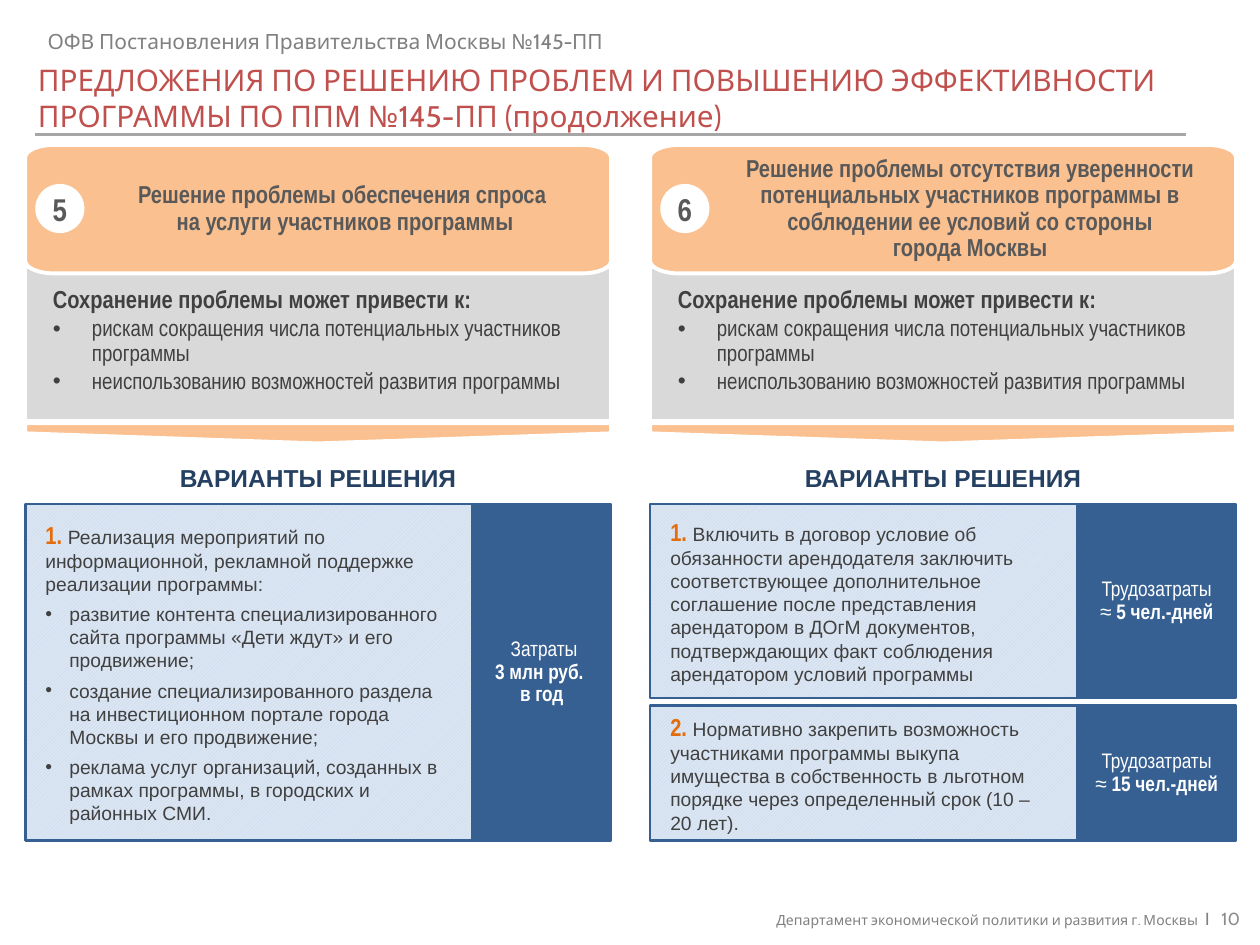
import math
from lxml import etree
from pptx import Presentation
from pptx import util as u
from pptx.dml import color
from pptx.enum import dml, shapes, text
from pptx.oxml import ns

In = u.Inches
MID, TOP = text.MSO_ANCHOR.MIDDLE, text.MSO_ANCHOR.TOP
LEFT, CENTER, RIGHT = text.PP_ALIGN.LEFT, text.PP_ALIGN.CENTER, text.PP_ALIGN.RIGHT
KIND = shapes.MSO_SHAPE
NARROW = "Arial Narrow"
INSET = (0.1, 0.05, 0.1, 0.05)


def rgb(code):
    return color.RGBColor.from_string(code)


def style(obj, vals):
    for key, val in vals.items():
        setattr(obj, key, val)


def font(size, name, code, bold=False):
    return dict(size=u.Pt(size), name=name, bold=bold), code


def add_run(para, words, look):
    for i, part in enumerate(words.split("\n")):
        if i:
            para.add_line_break()
        if part:
            run = para.add_run()
            run.text = part
            style(run.font, look[0])
            run.font.color.rgb = rgb(look[1])


def indent(para, left, hang, mark=None):
    props = para._p.get_or_add_pPr()
    props.set("marL", str(In(left)))
    props.set("indent", str(In(-hang)))
    if mark:
        font_el = etree.SubElement(props, ns.qn("a:buFont"))
        font_el.set("typeface", "Arial")
        etree.SubElement(props, ns.qn("a:buChar")).set("char", mark)


def write(shape, paras, inset=INSET, anchor=MID, align=LEFT, space=1, after=0):
    frame = shape.text_frame
    sides = ("margin_left", "margin_top", "margin_right", "margin_bottom")
    style(frame, dict(zip(sides, map(In, inset))))
    style(frame, dict(word_wrap=True, vertical_anchor=anchor,
                      auto_size=text.MSO_AUTO_SIZE.NONE))
    for i, (runs, dent) in enumerate(paras):
        para = frame.add_paragraph() if i else frame.paragraphs[0]
        style(para, dict(alignment=align, line_spacing=space, space_after=u.Pt(after)))
        if dent:
            indent(para, *dent)
        for words, look in runs:
            add_run(para, words, look)


def paint(shape, fill, line=None, width=2.25):
    shape.shadow.inherit = False
    if isinstance(fill, tuple):
        shape.fill.patterned()
        shape.fill.pattern = dml.MSO_PATTERN.LIGHT_UPWARD_DIAGONAL
        shape.fill.fore_color.rgb, shape.fill.back_color.rgb = map(rgb, fill)
    else:
        shape.fill.solid()
        shape.fill.fore_color.rgb = rgb(fill)
    if line:
        shape.line.color.rgb = rgb(line)
        shape.line.width = u.Pt(width)
    else:
        shape.line.fill.background()
    return shape


def block(slide, kind, box, *look):
    return paint(slide.shapes.add_shape(kind, *map(In, box)), *look)


def label(slide, box, paras, **opts):
    write(slide.shapes.add_textbox(*map(In, box)), paras, **opts)


def banner(slide, box, num, lines):
    x, y, w, h = box
    rx, ry, steps = 0.23, 0.1, 8
    mids = [(x + w - rx, y + ry), (x + w - rx, y + h - ry),
            (x + rx, y + h - ry), (x + rx, y + ry)]
    dots = []
    for i, (cx, cy) in enumerate(mids):
        for k in range(steps + 1):
            ang = math.pi / 2 * (i - 1 + k / steps)
            dots.append((In(cx + rx * math.cos(ang)), In(cy + ry * math.sin(ang))))
    pen = slide.shapes.build_freeform(*dots[0])
    pen.add_line_segments(dots[1:], close=True)
    look = font(14, NARROW, "595959", True)
    write(paint(pen.convert_to_shape(), "FAC090", "FFFFFF"),
          [([(line, look)], None) for line in lines],
          inset=(0.51, 0.03, 0.08, 0.03), align=CENTER, space=0.9)
    dot = block(slide, KIND.OVAL, (x + 0.08, y + 0.31, 0.39, 0.39), "FFFFFF")
    write(dot, [([(num, font(18, NARROW, "595959", True))], None)],
          inset=(0, 0, 0, 0), align=CENTER)


def risks(slide, box):
    head, item = font(14, NARROW, "404040", True), font(13, NARROW, "404040")
    dent = (0.41, 0.31, "•")
    write(block(slide, KIND.RECTANGLE, box, "D9D9D9", "FFFFFF"), [
        ([("Сохранение проблемы может привести к:", head)], (0.31, 0.21)),
        ([("рискам сокращения числа потенциальных участников программы", item)], dent),
        ([("неиспользованию возможностей развития программы", item)], dent),
    ], inset=(0.12, 0.16, 0.12, 0.08), anchor=TOP, space=0.9, after=2)


def arrow(slide, box):
    x, y, w, h = box
    spot = (x + (w - h) / 2, y + (h - w) / 2, h, w)
    block(slide, KIND.PENTAGON, spot, "FAC090", "FFFFFF").rotation = 90


def option(slide, box, side, num, lead, items, cost, total):
    x, y, w, h = box
    navy = "376092"
    plain, bold = font(12, NARROW, "FFFFFF"), font(12, NARROW, "FFFFFF", True)
    price = block(slide, KIND.RECTANGLE, (x + w - side, y, side, h), navy, navy, 1.5)
    write(price, [([(cost, plain), (total, bold)], None)],
          inset=(0.06, 0.04, 0.06, 0.04), align=CENTER, space=0.9, after=6)
    plan = block(slide, KIND.PENTAGON, (x, y, w - side, h),
                 ("C0D5EE", "DCE6F2"), navy, 1.5)
    plan.adjustments[0] = 0
    body = font(11, "Arial", "404040")
    paras = [([(num + " ", font(14, NARROW, "E46C0A", True)), (lead, body)], None)]
    paras += [([(item, body)], (0.19, 0.19, "•")) for item in items]
    write(plan, paras, inset=(0.16, 0.08, 0.16, 0.08), after=4)


def column(slide, box, num, lines, plans):
    x, y, w, h = box
    arrow(slide, (x, y + 2.21, w, 0.16))
    risks(slide, (x, y + 0.97, w, 1.22))
    banner(slide, (x, y, w, 1.02), num, lines)
    label(slide, (x, y + 2.49, w, 0.33),
          [([("ВАРИАНТЫ РЕШЕНИЯ", font(14, "Arial", "254061", True))], None)],
          inset=(0, 0, 0, 0), anchor=MID, align=CENTER, space=0.9, after=6)
    top, gap = y + 2.85, 0.06
    for tall, *rest in plans:
        option(slide, (x, top, w, tall), *rest)
        top += tall + gap


def header(slide, box):
    x, y, w, h = box
    title = slide.shapes.title
    style(title, dict(zip(("left", "top", "width", "height"),
                          map(In, (x, y + 0.26, w, 0.67)))))
    write(title, [([("ПРЕДЛОЖЕНИЯ ПО РЕШЕНИЮ ПРОБЛЕМ И ПОВЫШЕНИЮ ЭФФЕКТИВНОСТИ "
                     "ПРОГРАММЫ ПО ППМ №145-ПП (продолжение)",
                     font(17, "Cabin", "C0504D"))], None)], anchor=TOP)
    label(slide, (x + 0.08, y, 7.24, 0.3),
          [([("ОФВ Постановления Правительства Москвы №145-ПП",
              font(12, "Cabin", "808080"))], None)], anchor=TOP)
    rule = slide.shapes.add_connector(shapes.MSO_CONNECTOR.STRAIGHT, In(x + 0.08),
                                      In(y + h), In(9.41), In(y + h))
    rule.line.color.rgb = rgb("A6A6A6")
    rule.line.width = u.Pt(1.5)
    etree.SubElement(rule._element.spPr, ns.qn("a:effectLst"))


def footer(slide, box):
    label(slide, box, [([
        ("Департамент экономической политики и развития г. Москвы  ",
         font(8, "Cabin", "808080")),
        ("I   ", font(10, "Cabin", "808080")),
        ("10", font(10, "Cabin", "8C8C8C"))], None)], align=RIGHT)


def main():
    deck = Presentation()
    style(deck, dict(slide_width=In(10), slide_height=In(7.5)))
    slide = deck.slides.add_slide(deck.slide_layouts[5])
    header(slide, (0.2, 0.18, 9.69, 0.89))
    column(slide, (0.2, 1.15, 4.65, 5.52), "5",
           ["Решение проблемы обеспечения спроса ", "на услуги участников программы"],
           [(2.67, 1.1, "1.", "Реализация мероприятий по информационной, рекламной "
             "поддержке реализации программы:",
             ["развитие контента специализированного сайта программы «Дети ждут» "
              "и его продвижение;",
              "создание специализированного раздела на инвестиционном портале города "
              "Москвы и его продвижение;",
              "реклама услуг организаций, созданных в рамках программы, в городских "
              "и районных СМИ."], " Затраты\n", "3 млн руб. \nв год")])
    column(slide, (5.16, 1.15, 4.65, 5.52), "6",
           ["Решение проблемы отсутствия уверенности потенциальных участников программы "
            "в соблюдении ее условий со стороны\nгорода Москвы"],
           [(1.54, 1.26, "1.", "Включить в договор условие об обязанности арендодателя "
             "заключить соответствующее дополнительное соглашение после представления "
             "арендатором в ДОгМ документов, подтверждающих факт соблюдения арендатором "
             "условий программы", [], "Трудозатраты\n≈ ", "5 чел.-дней"),
            (1.07, 1.26, "2.", "Нормативно закрепить возможность участниками программы "
             "выкупа имущества в собственность в льготном порядке через определенный "
             "срок (10 – 20 лет).", [], "Трудозатраты\n≈ ", "15 чел.-дней")])
    footer(slide, (5.02, 7.21, 4.92, 0.16))
    deck.save("out.pptx")


if __name__ == "__main__":
    main()
